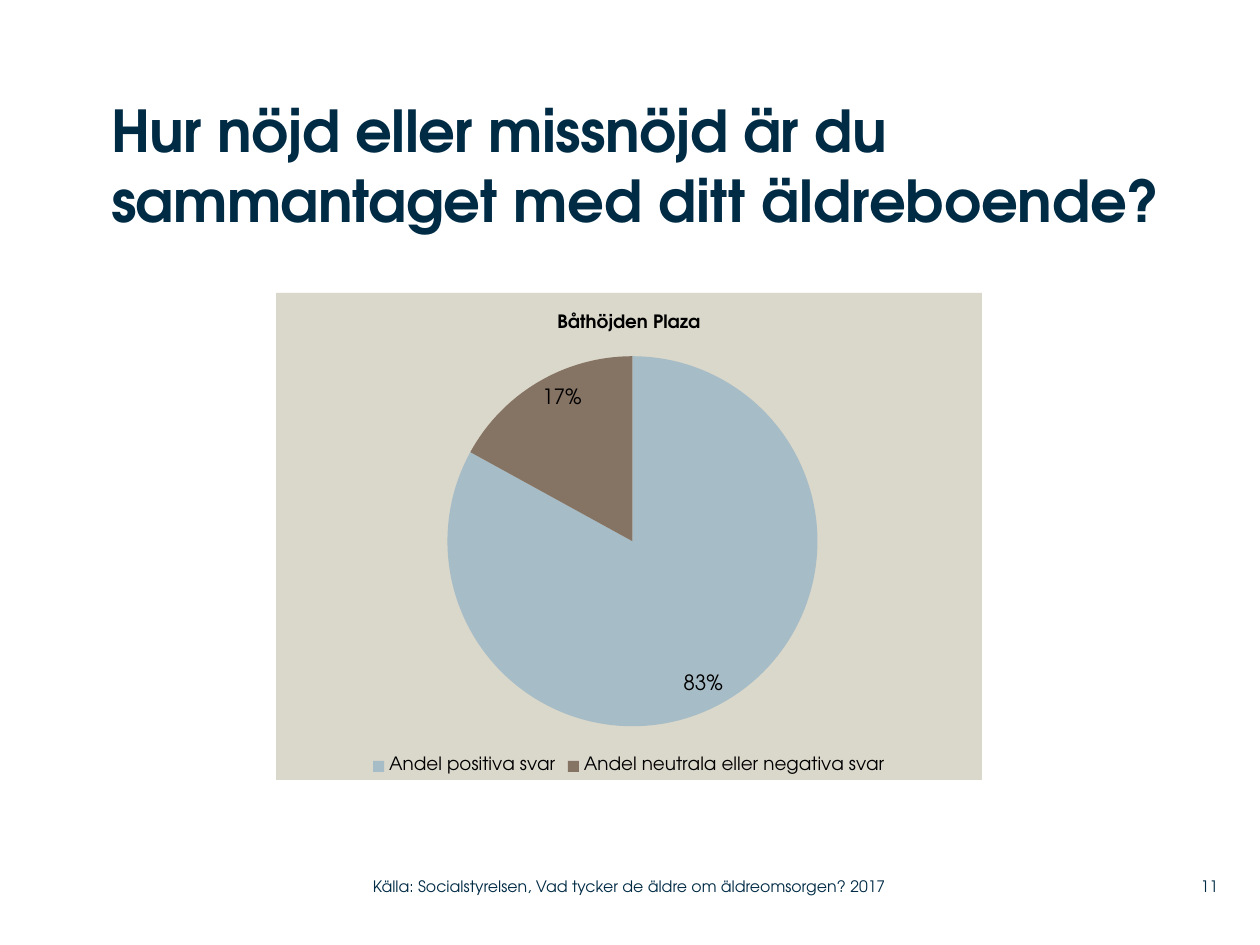
import pptx
import pptx.chart.data
import pptx.dml.color
import pptx.enum.chart
import pptx.enum.text
import pptx.oxml
import pptx.oxml.ns
import pptx.util

PX = 914400 // 126
FONT = "TeX Gyre Adventor"
NAVY = "002B45"
BLACK = "000000"


def color(code):
    return pptx.dml.color.RGBColor.from_string(code)


def style(font, size, code, bold=False):
    font.name = FONT
    font.size = pptx.util.Pt(size)
    font.bold = bold
    font.color.rgb = color(code)


deck = pptx.Presentation()
deck.slide_width = 1260 * PX
deck.slide_height = 945 * PX
page = deck.slides.add_slide(deck.slide_layouts[5])

title = page.shapes.title
title.left, title.top, title.width, title.height = [n * PX for n in (111, 95, 1113, 179)]
frame = title.text_frame
frame.margin_left = frame.margin_right = frame.margin_top = frame.margin_bottom = 0
frame.word_wrap = True
frame.auto_size = pptx.enum.text.MSO_AUTO_SIZE.NONE
frame.vertical_anchor = pptx.enum.text.MSO_ANCHOR.TOP
para = frame.paragraphs[0]
para.alignment = pptx.enum.text.PP_ALIGN.LEFT
for text, spacing in (
    ("Hur nöjd eller missnöjd är du sammantaget ", "-30"),
    ("med ditt äldreboende?", "0"),
):
    span = para.add_run()
    span.text = text
    style(span.font, 33, NAVY, True)
    span._r.get_or_add_rPr().set("spc", spacing)

for text, left, width, alignment in (
    ("Källa: Socialstyrelsen, Vad tycker de äldre om äldreomsorgen? 2017", 373, 558, "LEFT"),
    ("11", 1159, 59, "RIGHT"),
):
    box = page.shapes.add_textbox(left * PX, 868 * PX, width * PX, 37 * PX)
    frame = box.text_frame
    frame.margin_left = frame.margin_right = frame.margin_top = frame.margin_bottom = 0
    frame.word_wrap = True
    frame.vertical_anchor = pptx.enum.text.MSO_ANCHOR.MIDDLE
    frame.text = text
    para = frame.paragraphs[0]
    para.alignment = pptx.enum.text.PP_ALIGN[alignment]
    style(para.runs[0].font, 9, NAVY)

answers = pptx.chart.data.CategoryChartData()
answers.categories = ["Andel positiva svar", "Andel neutrala eller negativa svar"]
answers.add_series("Series 1", (83, 17))
chart = page.shapes.add_chart(
    pptx.enum.chart.XL_CHART_TYPE.PIE, 276 * PX, 293 * PX, 706 * PX, 487 * PX, answers
).chart
style(chart.font, 18, BLACK)

chart.has_title = True
chart.chart_title.include_in_layout = False
chart.chart_title.text_frame.text = "Båthöjden Plaza"
style(chart.chart_title.text_frame.paragraphs[0].runs[0].font, 10.5, BLACK, True)

chart.has_legend = True
chart.legend.position = pptx.enum.chart.XL_LEGEND_POSITION.BOTTOM
chart.legend.include_in_layout = False
style(chart.legend.font, 10.5, BLACK)

plot = chart.plots[0]
plot.vary_by_categories = True
for index, code in enumerate(("A6BCC6", "857363")):
    fill = plot.series[0].points[index].format.fill
    fill.solid()
    fill.fore_color.rgb = color(code)

plot.has_data_labels = True
labels = plot.data_labels
labels.show_percentage = True
labels.show_value = False
labels.number_format = "0%"
labels.number_format_is_linked = False
labels.position = pptx.enum.chart.XL_LABEL_POSITION.INSIDE_END
style(labels.font, 12, BLACK)

namespaces = pptx.oxml.ns.nsdecls("c", "a")
background = pptx.oxml.parse_xml(
    f'<c:spPr {namespaces}><a:solidFill><a:srgbClr val="DAD7CB"/></a:solidFill>'
    "<a:ln><a:noFill/></a:ln></c:spPr>"
)
chart_space = chart.element
chart_space.find(pptx.oxml.ns.qn("c:chart")).addnext(background)

plot_area = chart_space.find(".//" + pptx.oxml.ns.qn("c:plotArea"))
for old_layout in plot_area.findall(pptx.oxml.ns.qn("c:layout")):
    plot_area.remove(old_layout)
plot_area.insert(0, pptx.oxml.parse_xml(
    f'<c:layout {namespaces}><c:manualLayout><c:layoutTarget val="inner"/>'
    '<c:xMode val="edge"/><c:yMode val="edge"/><c:x val="0.24"/><c:y val="0.13"/>'
    '<c:w val="0.53"/><c:h val="0.76"/></c:manualLayout></c:layout>'
))

deck.save("out.pptx")
